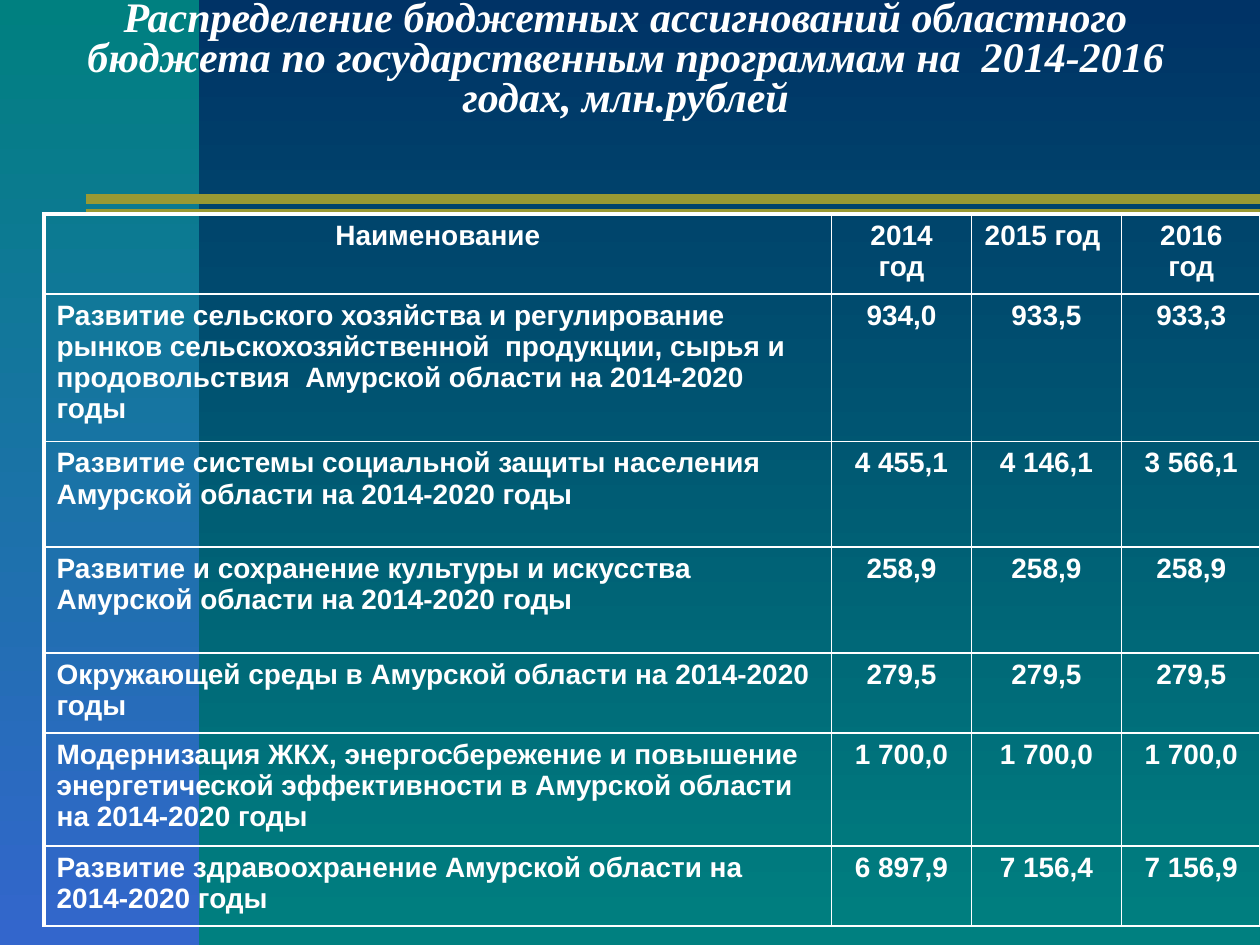
from dataclasses import dataclass

from lxml import etree
from pptx import Presentation
from pptx.dml.color import RGBColor
from pptx.enum.shapes import MSO_CONNECTOR, MSO_SHAPE
from pptx.enum.text import MSO_ANCHOR, PP_ALIGN
from pptx.oxml.ns import qn
from pptx.util import Inches, Pt

RECTANGLE = MSO_SHAPE.RECTANGLE
STRAIGHT = MSO_CONNECTOR.STRAIGHT
MIDDLE, TOP = MSO_ANCHOR.MIDDLE, MSO_ANCHOR.TOP
CENTER, LEFT = PP_ALIGN.CENTER, PP_ALIGN.LEFT

# The slide is a grid of 100 columns by 75 rows
COLUMNS, ROWS = 100, 75
UNIT = Inches(0.1)


@dataclass(frozen=True)
class Theme:
    page_gradient: tuple = ("003366", "008080")
    band_gradient: tuple = ("008080", "3366CC")
    rule: str = "999933"
    text: str = "FFFFFF"
    shadow: str = "000000"
    title_font: str = "Times New Roman"
    table_font: str = "Arial"
    title_size: int = 24
    table_size: int = 16
    inner_border: float = 1
    outer_border: float = 2.25


@dataclass(frozen=True)
class Area:
    left: float
    top: float
    width: float
    height: float

    def place(self) -> tuple:
        return tuple(grid(n) for n in (self.left, self.top, self.width, self.height))


@dataclass(frozen=True)
class Rule:
    row: float
    weight: float


@dataclass(frozen=True)
class Program:
    name: str
    amounts: tuple
    height: float


THEME = Theme()
BAND = Area(0, 0, 15.8, ROWS)
TITLE_AREA = Area(2, -4.2, 95.3, 15.7)
TABLE_AREA = Area(3.5, 17, 96.5, 55.1)
COLUMN_WIDTHS = (62.5, 11.1, 11.9, 11.1)
RULE_START = 6.8
RULES = (Rule(16.7, 2), Rule(15.8, 6))

TITLE = ("Распределение бюджетных ассигнований областного бюджета по "
         "государственным программам на  2014-2016 годах, млн.рублей")
HEADER = Program("Наименование", ("2014 год", "2015 год ", "2016 год"), 6)
PROGRAMS = (
    Program("Развитие сельского хозяйства и регулирование рынков "
            "сельскохозяйственной  продукции, сырья и продовольствия  "
            "Амурской области на 2014-2020 годы", ("934,0", "933,5", "933,3"), 11.7),
    Program("Развитие системы социальной защиты населения Амурской области "
            "на 2014-2020 годы", ("4 455,1", "4 146,1", "3 566,1"), 8.4),
    Program("Развитие и сохранение культуры и искусства Амурской области "
            "на 2014-2020 годы", ("258,9",) * 3, 8.4),
    Program("Окружающей среды в Амурской области на 2014-2020 годы", ("279,5",) * 3, 6),
    Program("Модернизация ЖКХ, энергосбережение и повышение энергетической "
            "эффективности в Амурской области на 2014-2020 годы", ("1 700,0",) * 3, 8.6),
    Program("Развитие здравоохранение Амурской области на 2014-2020 годы",
            ("6 897,9", "7 156,4", "7 156,9"), 6),
)


def grid(units: float) -> int:
    return round(units * UNIT)


def apply(target, values: dict) -> None:
    for name, value in values.items():
        setattr(target, name, value)


def fill_gradient(fill, colors: tuple) -> None:
    fill.gradient()
    fill.gradient_angle = 270
    for stop, color in zip(fill.gradient_stops, colors):
        stop.color.rgb = RGBColor.from_string(color)


def write(frame, text: str, align, font: dict):
    para = frame.paragraphs[0]
    para.alignment = align
    span = para.add_run()
    span.text = text
    apply(span.font, font)
    span.font.color.rgb = RGBColor.from_string(THEME.text)
    return para, span


def add_band(page) -> None:
    band = page.shapes.add_shape(RECTANGLE, *BAND.place())
    band.shadow.inherit = False
    band.line.fill.background()
    fill_gradient(band.fill, THEME.band_gradient)


def add_rule(page, rule: Rule) -> None:
    line = page.shapes.add_connector(
        STRAIGHT, grid(RULE_START), grid(rule.row), grid(COLUMNS), grid(rule.row))
    line.line.color.rgb = RGBColor.from_string(THEME.rule)
    line.line.width = Pt(rule.weight)
    etree.SubElement(line._element.spPr, qn("a:effectLst"))


def add_title(page) -> None:
    box = page.shapes.add_textbox(*TITLE_AREA.place())
    apply(box.text_frame, {"word_wrap": True, "vertical_anchor": MIDDLE,
                           "margin_top": grid(2.8), "margin_bottom": grid(0.5)})
    para, span = write(box.text_frame, TITLE, CENTER, {
        "name": THEME.title_font, "size": Pt(THEME.title_size), "bold": True, "italic": True})
    para.line_spacing = 0.8
    # Text shadow, directly after the fill
    effects = etree.Element(qn("a:effectLst"))
    shadow = etree.SubElement(effects, qn("a:outerShdw"), dist="38100", dir="2700000")
    etree.SubElement(shadow, qn("a:srgbClr"), val=THEME.shadow)
    span._r.rPr.find(qn("a:solidFill")).addnext(effects)


def set_borders(cell, weights: dict) -> None:
    properties = cell._tc.get_or_add_tcPr()
    for index, (side, weight) in enumerate(weights.items()):
        line = etree.Element(qn(f"a:{side}"), w=str(Pt(weight)))
        fill = etree.SubElement(line, qn("a:solidFill"))
        etree.SubElement(fill, qn("a:srgbClr"), val=THEME.text)
        properties.insert(index, line)


def add_table(page) -> None:
    lines = (HEADER, *PROGRAMS)
    table = page.shapes.add_table(
        len(lines), len(COLUMN_WIDTHS), *TABLE_AREA.place()).table
    apply(table, {"first_row": False, "horz_banding": False})
    for column, width in zip(table.columns, COLUMN_WIDTHS):
        column.width = grid(width)
    font = {"name": THEME.table_font, "size": Pt(THEME.table_size), "bold": True}
    inner, outer = THEME.inner_border, THEME.outer_border
    last = len(COLUMN_WIDTHS) - 1
    for r, line in enumerate(lines):
        table.rows[r].height = grid(line.height)
        for c, text in enumerate((line.name, *line.amounts)):
            cell = table.cell(r, c)
            cell.fill.background()
            cell.vertical_anchor = TOP
            write(cell.text_frame, text, LEFT if r and not c else CENTER, font)
            set_borders(cell, {"lnL": inner if c else outer,
                               "lnR": outer if c == last else inner,
                               "lnT": inner if r else outer,
                               "lnB": inner})


def main() -> None:
    deck = Presentation()
    apply(deck, {"slide_width": COLUMNS * UNIT, "slide_height": ROWS * UNIT})
    page = deck.slides.add_slide(deck.slide_layouts[6])

    # Backdrop
    fill_gradient(page.background.fill, THEME.page_gradient)
    add_band(page)
    for rule in RULES:
        add_rule(page, rule)

    # Content
    add_title(page)
    add_table(page)
    deck.save("out.pptx")


if __name__ == "__main__":
    main()
